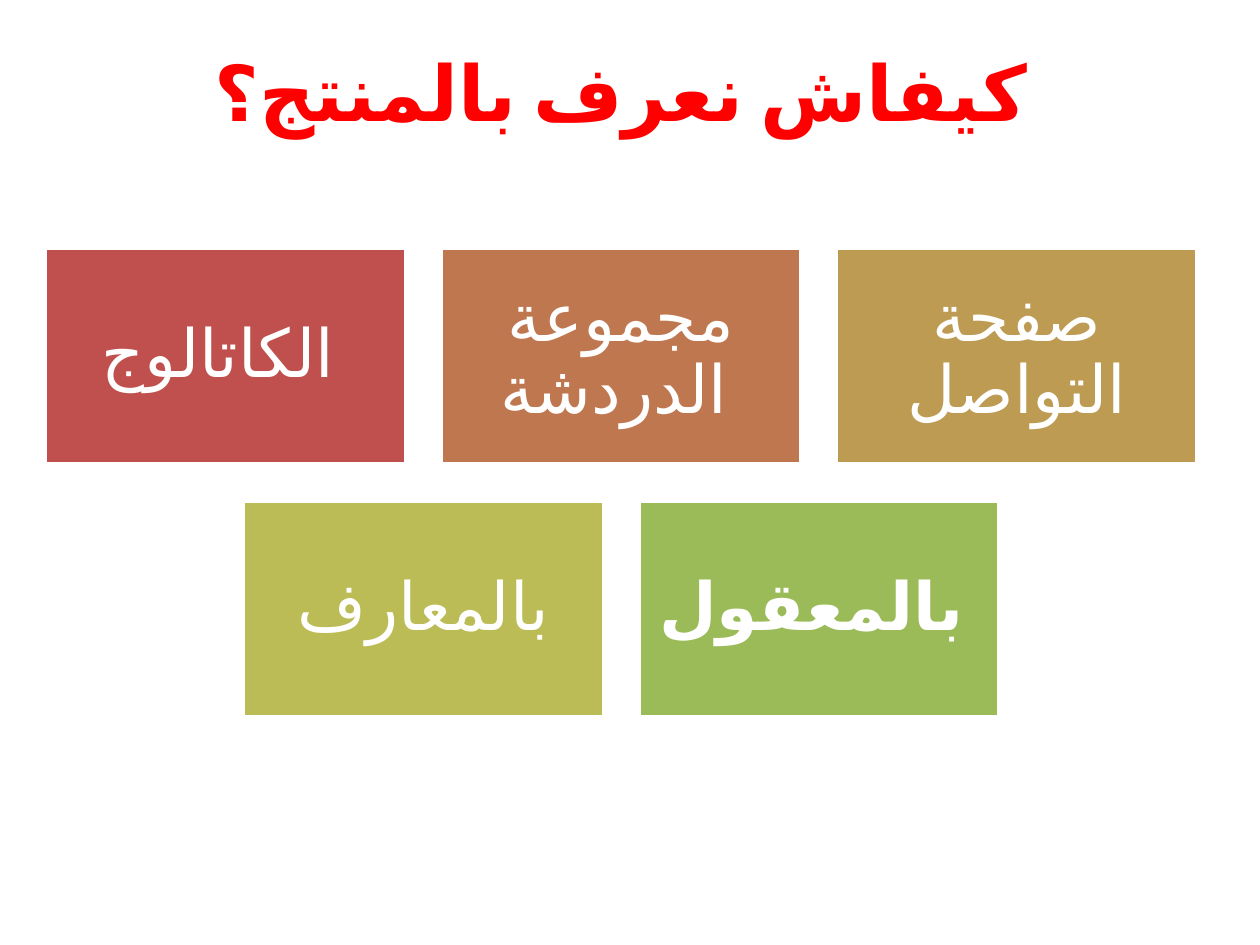
import dataclasses

import lxml.etree
import pptx
import pptx.dml.color
import pptx.enum.lang
import pptx.enum.shapes
import pptx.enum.text
import pptx.oxml.ns
import pptx.util

Inches = pptx.util.Inches
Alignment = pptx.enum.text.PP_ALIGN
Anchor = pptx.enum.text.MSO_ANCHOR


@dataclasses.dataclass(frozen=True)
class Theme:
    font: str = "Calibri"
    title_size: int = 44
    tile_size: int = 38
    title_color: str = "FF0000"
    white: str = "FFFFFF"
    border_width: int = 2


@dataclasses.dataclass(frozen=True)
class Grid:
    center: float = 4.93
    top: float = 1.97
    tile_width: float = 2.86
    tile_height: float = 1.71
    gap: float = 0.28
    row_gap: float = 0.3

    def place(self, row, column, columns):
        row_width = columns * self.tile_width + (columns - 1) * self.gap
        left = self.center - row_width / 2 + column * (self.tile_width + self.gap)
        top = self.top + row * (self.tile_height + self.row_gap)
        return [Inches(value) for value in (left, top, self.tile_width, self.tile_height)]


THEME = Theme()
GRID = Grid()
TITLE = "كيفاش نعرف بالمنتج؟ "
TILE_ROWS = [
    [
        ("الكاتالوج ", "C0504D", False),
        ("مجموعة الدردشة ", "BF7750", False),
        ("صفحة التواصل", "BD9B53", False),
    ],
    [
        ("بالمعارف", "BCBC56", False),
        ("بالمعقول ", "9BBB59", True),
    ],
]


def set_values(target, values):
    for name, value in values.items():
        setattr(target, name, value)


def color(value):
    return pptx.dml.color.RGBColor.from_string(value)


def write_text(shape, text, size, text_color, bold, frame_format, line_spacing):
    frame = shape.text_frame
    set_values(frame, {"word_wrap": True, "auto_size": pptx.enum.text.MSO_AUTO_SIZE.NONE, **frame_format})
    paragraph = frame.paragraphs[0]
    set_values(paragraph, {"alignment": Alignment.CENTER, "line_spacing": line_spacing})
    run = paragraph.add_run()
    run.text = text
    set_values(run.font, {
        "name": THEME.font,
        "size": pptx.util.Pt(size),
        "bold": bold,
        "language_id": pptx.enum.lang.MSO_LANGUAGE_ID.ARABIC_MOROCCO,
    })
    run.font.color.rgb = color(text_color)
    properties = run._r.get_or_add_rPr()
    lxml.etree.SubElement(properties, pptx.oxml.ns.qn("a:cs"), typeface=THEME.font)


def format_title(presentation, slide):
    title = slide.shapes.title
    width, height = presentation.slide_width, presentation.slide_height
    set_values(title, {
        "left": int(width * 0.05),
        "top": int(height * 0.04),
        "width": int(width * 0.9),
        "height": int(height / 6),
    })
    write_text(title, TITLE, THEME.title_size, THEME.title_color, True,
               {"vertical_anchor": Anchor.TOP}, 1.0)


def add_tile(slide, position, text, fill, bold):
    tile = slide.shapes.add_shape(pptx.enum.shapes.MSO_SHAPE.RECTANGLE, *position)
    tile.shadow.inherit = False
    tile.fill.solid()
    tile.fill.fore_color.rgb = color(fill)
    tile.line.color.rgb = color(THEME.white)
    tile.line.width = pptx.util.Pt(THEME.border_width)
    frame_format = {"vertical_anchor": Anchor.MIDDLE}
    for side in ("left", "top", "right", "bottom"):
        frame_format[f"margin_{side}"] = Inches(0.16)
    write_text(tile, text, THEME.tile_size, THEME.white, bold, frame_format, 0.9)


def main():
    presentation = pptx.Presentation()
    set_values(presentation, {"slide_width": Inches(10), "slide_height": Inches(7.5)})
    slide = presentation.slides.add_slide(presentation.slide_layouts.get_by_name("Title Only"))
    format_title(presentation, slide)
    for row, tiles in enumerate(TILE_ROWS):
        for column, (text, fill, bold) in enumerate(tiles):
            add_tile(slide, GRID.place(row, column, len(tiles)), text, fill, bold)
    presentation.save("out.pptx")


if __name__ == "__main__":
    main()
